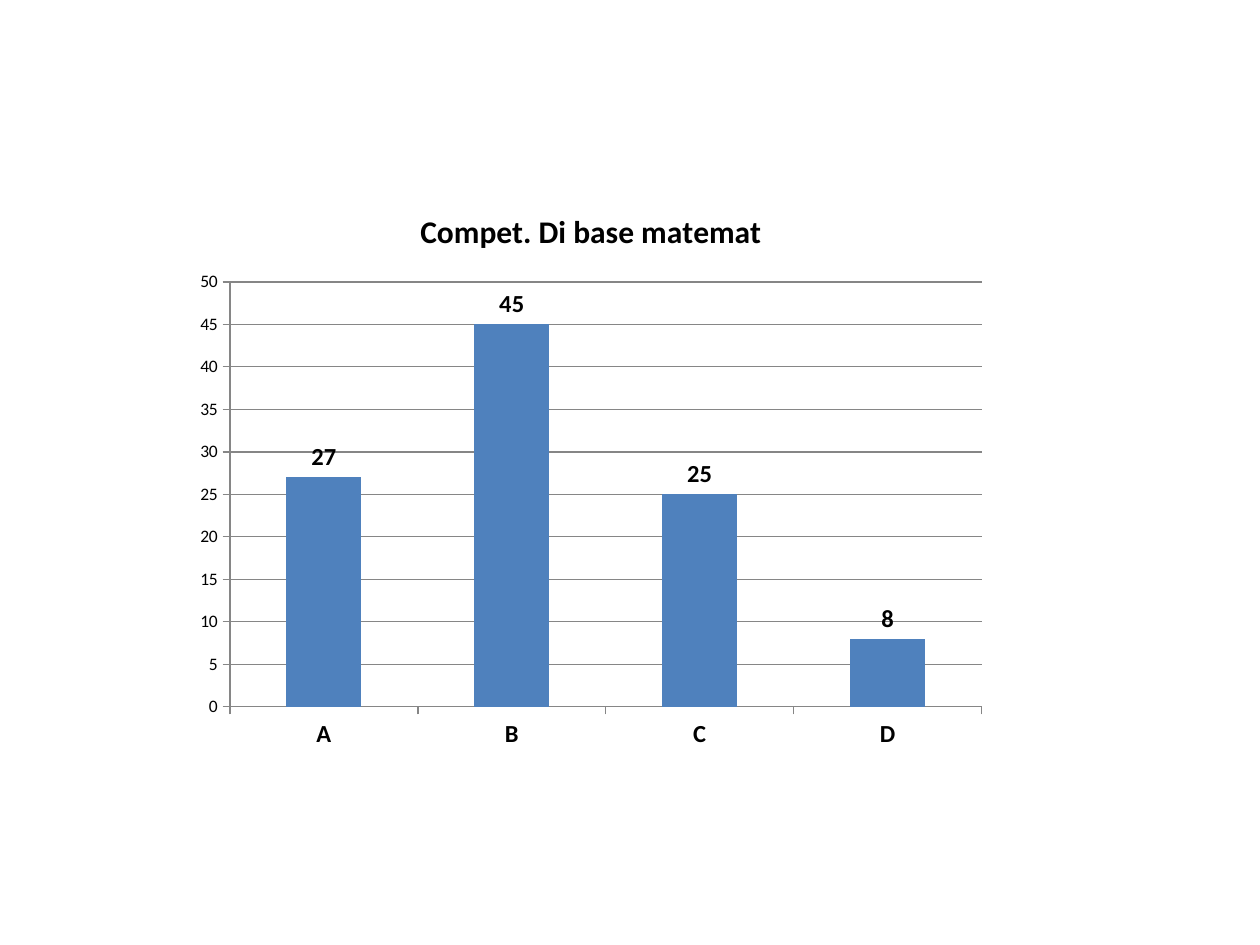
from pptx import Presentation
from pptx.chart.data import CategoryChartData
from pptx.dml.color import RGBColor
from pptx.enum.chart import XL_CHART_TYPE as ChartType
from pptx.enum.chart import XL_LABEL_POSITION as LabelPosition
from pptx.enum.chart import XL_TICK_MARK as TickMark
from pptx.util import Inches, Pt

TITLE = "Compet. Di base matemat"
SCORES = {"A": 27, "B": 45, "C": 25, "D": 8}
BLACK, GRAY, BLUE = "000000", "868686", "4F81BD"


def color(value: str) -> RGBColor:
    return RGBColor.from_string(value)


def style_font(font, size: float, bold: bool = False) -> None:
    font.name = "Calibri"
    font.size = Pt(size)
    font.bold = bold
    font.color.rgb = color(BLACK)


def style_line(line) -> None:
    line.color.rgb = color(GRAY)
    line.width = Pt(0.75)


def style_axis(axis, size: float, bold: bool, gridlines: bool) -> None:
    axis.major_tick_mark = TickMark.OUTSIDE
    axis.minor_tick_mark = TickMark.NONE
    axis.has_major_gridlines = gridlines
    if gridlines:
        style_line(axis.major_gridlines.format.line)
    style_line(axis.format.line)
    style_font(axis.tick_labels.font, size, bold)


def add_score_chart(slide) -> None:
    data = CategoryChartData()
    data.categories = list(SCORES)
    data.add_series(TITLE, list(SCORES.values()))
    chart = slide.shapes.add_chart(
        ChartType.COLUMN_CLUSTERED,
        Inches(1.46), Inches(1.47), Inches(6.46), Inches(4.57), data,
    ).chart
    style_font(chart.font, 10)
    chart.has_legend = False

    chart.has_title = True
    chart.chart_title.include_in_layout = False
    run = chart.chart_title.text_frame.paragraphs[0].add_run()
    run.text = TITLE
    style_font(run.font, 18, bold=True)

    style_axis(chart.category_axis, 14, bold=True, gridlines=False)
    style_axis(chart.value_axis, 10, bold=False, gridlines=True)
    chart.value_axis.minimum_scale = 0
    chart.value_axis.maximum_scale = 50
    chart.value_axis.major_unit = 5

    plot = chart.plots[0]
    plot.gap_width = 150
    plot.vary_by_categories = False
    fill = plot.series[0].format.fill
    fill.solid()
    fill.fore_color.rgb = color(BLUE)

    labels = plot.series[0].data_labels
    labels.show_value = True
    labels.position = LabelPosition.OUTSIDE_END
    style_font(labels.font, 14, bold=True)


def main() -> None:
    presentation = Presentation()
    presentation.slide_width = Inches(10)
    presentation.slide_height = Inches(7.5)
    slide = presentation.slides.add_slide(presentation.slide_layouts[6])
    add_score_chart(slide)
    presentation.save("out.pptx")


if __name__ == "__main__":
    main()
